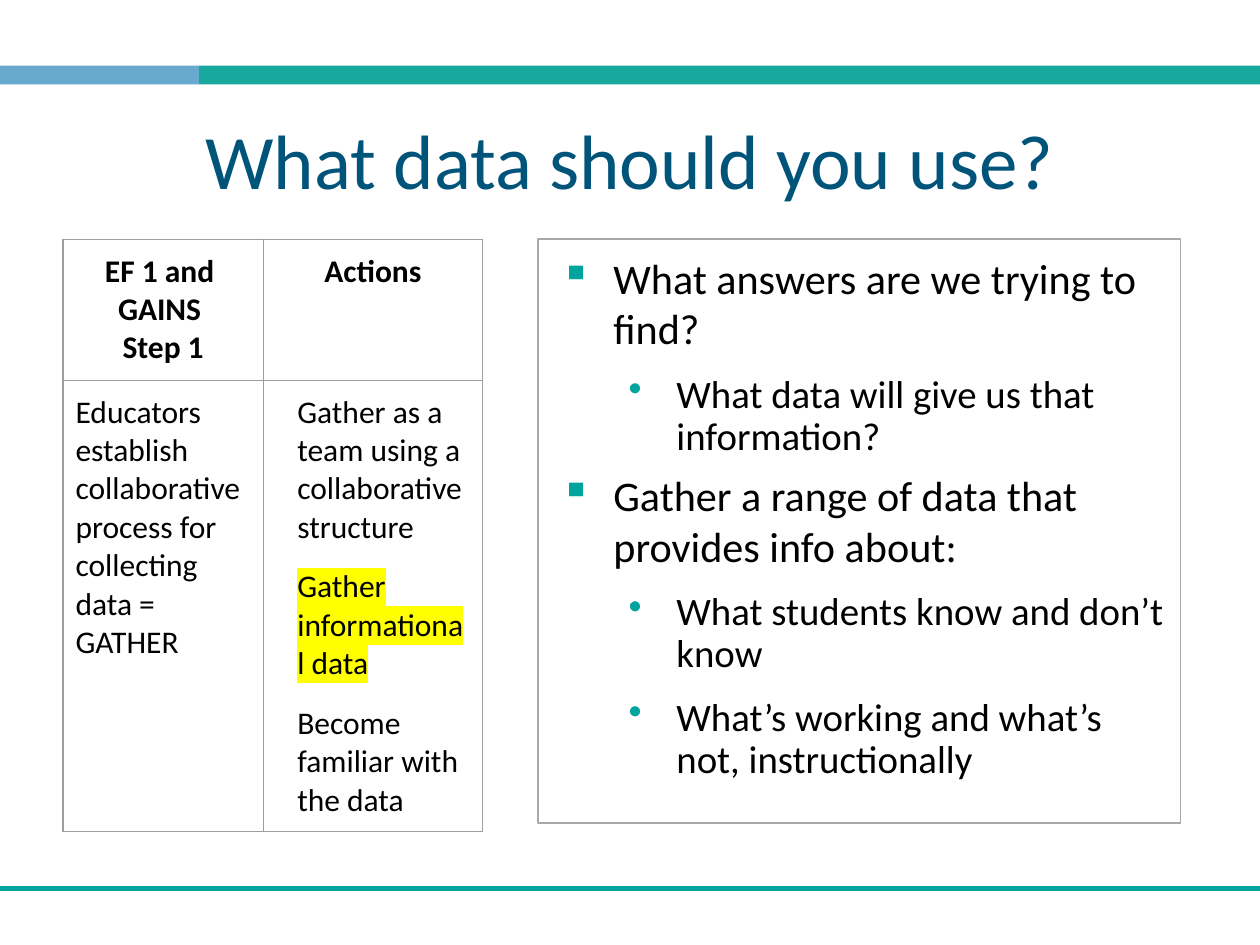
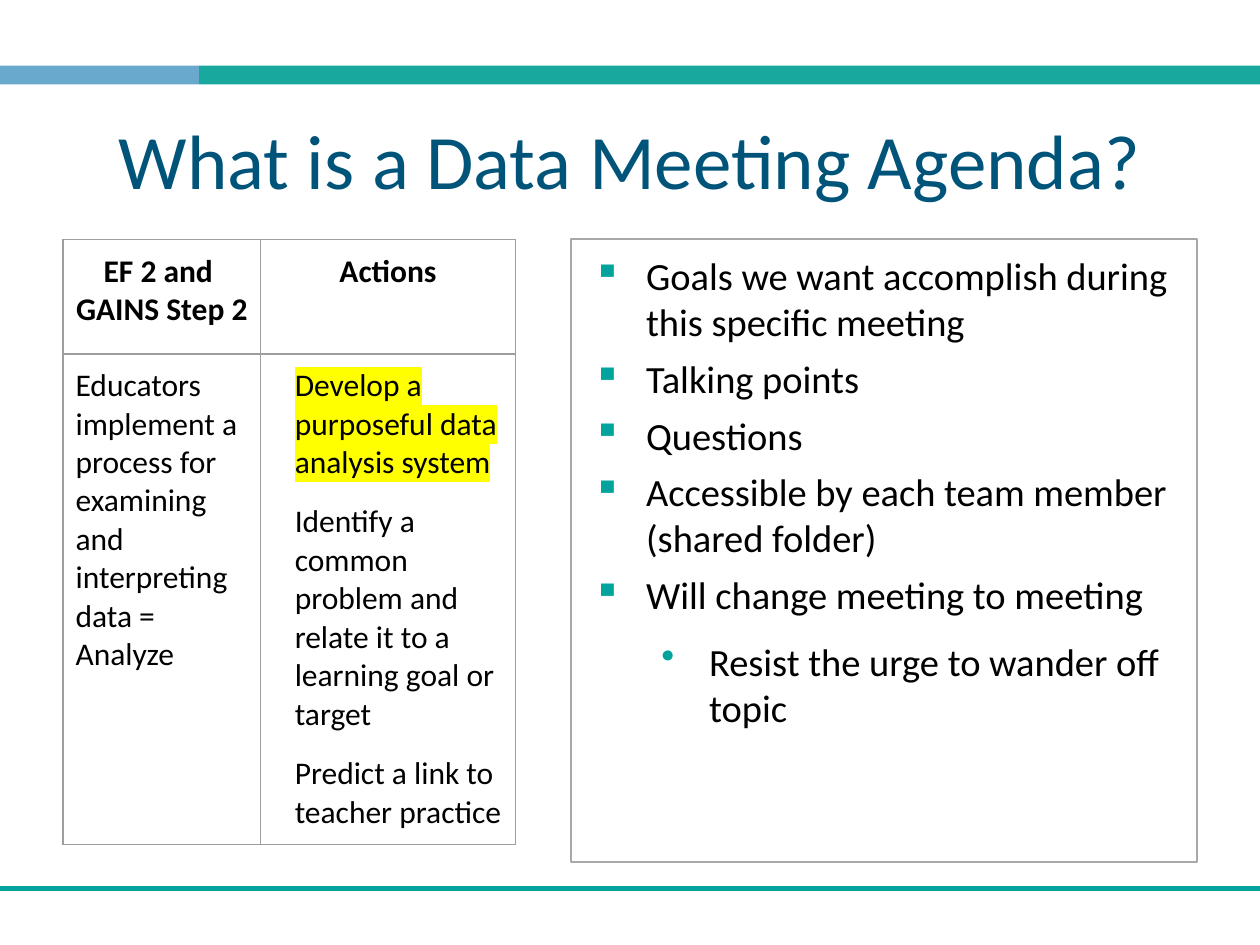
"""Builds two data-team slides, each with an action table and a bulleted panel."""
from lxml import etree
from pptx import Presentation
from pptx.dml.color import RGBColor
from pptx.enum.shapes import MSO_CONNECTOR, MSO_SHAPE
from pptx.enum.text import MSO_ANCHOR, PP_ALIGN
from pptx.oxml import parse_xml
from pptx.oxml.ns import nsdecls, qn
from pptx.util import Inches, Pt

RECTANGLE = MSO_SHAPE.RECTANGLE
STRAIGHT = MSO_CONNECTOR.STRAIGHT
CENTER, LEFT = PP_ALIGN.CENTER, PP_ALIGN.LEFT
TOP, MIDDLE = MSO_ANCHOR.TOP, MSO_ANCHOR.MIDDLE

FONT = "Calibri"
BLUE, TEAL, ACCENT, NAVY = "69A9CD", "19A89E", "00A49D", "005479"
BLACK, PANEL_LINE, TABLE_LINE, YELLOW = "000000", "A7A8AA", "9E9E9E", "FFFF00"
WIDTH, HEIGHT = Inches(10), Inches(7.5)
MARGIN = Inches(0.5)
CONTENT_TOP = Inches(1.9)
INSET = Inches(0.1)
BAND_TOP, BAND_HEIGHT, BAND_SPLIT = Inches(0.52), Inches(0.15), Inches(1.58)
BULLETS = [("▪", 0.5, -0.42), ("•", 1, -0.38)]


def color(hex_string):
    return RGBColor.from_string(hex_string)


def add_text(paragraph, text, size, hex_string=BLACK, bold=False, align=LEFT):
    paragraph.alignment = align
    run = paragraph.add_run()
    run.text = text
    run.font.name, run.font.size, run.font.bold = FONT, Pt(size), bold
    run.font.color.rgb = color(hex_string)
    return run


slides = [
    {
        "title": "What data should you use?",
        "columns": [1.59, 1.74],
        "rows": [1.12, 3.58],
        "heading": ["EF 1 and ", "GAINS ", "Step 1"],
        "process": "Educators establish collaborative process for collecting data = GATHER",
        "actions": ["Gather as a team using a collaborative structure",
                    "Gather informational data",
                    "Become familiar with the data"],
        "current_action": 1,
        "panel": [4.27, 5.1, 4.63],
        "sizes": [24.1, 22.2],
        "sub_spacing": [0.9, 6.4, 6],
        "points": [(0, "What answers are we trying to find?"),
                   (1, "What data will give us that information?"),
                   (0, "Gather a range of data that provides info about:"),
                   (1, "What students know and don’t know"),
                   (1, "What’s working and what’s not, instructionally")],
    },
    {
        "title": "What is a Data Meeting Agenda?",
        "columns": [1.57, 2.02],
        "rows": [0.91, 3.89],
        "heading": ["EF 2 and ", "GAINS Step 2"],
        "process": "Educators implement a process for examining and interpreting data = Analyze",
        "actions": ["Develop a purposeful data analysis system",
                    "Identify a common problem and relate it to a learning goal or target",
                    "Predict a link to teacher practice"],
        "current_action": 0,
        "panel": [4.53, 4.97, 4.94],
        "sizes": [22, 22],
        "sub_spacing": [1.0, 5.6, 0],
        "points": [(0, "Goals we want accomplish during this specific meeting"),
                   (0, "Talking points"),
                   (0, "Questions"),
                   (0, "Accessible by each team member (shared folder)"),
                   (0, "Will change meeting to meeting"),
                   (1, "Resist the urge to wander off topic")],
    },
]

presentation = Presentation()
presentation.slide_width, presentation.slide_height = WIDTH, HEIGHT

for content in slides:
    slide = presentation.slides.add_slide(presentation.slide_layouts[6])

    for left, right, fill in [(0, BAND_SPLIT, BLUE), (BAND_SPLIT, WIDTH, TEAL)]:
        band = slide.shapes.add_shape(RECTANGLE, left, BAND_TOP, right - left, BAND_HEIGHT)
        band.shadow.inherit = False
        band.fill.solid()
        band.fill.fore_color.rgb = color(fill)
        band.line.fill.background()

    footer_top = Inches(7.05)
    footer = slide.shapes.add_connector(STRAIGHT, 0, footer_top, WIDTH, footer_top)
    footer.line.color.rgb = color(ACCENT)
    footer.line.width = Pt(3)
    etree.SubElement(footer.element.spPr, qn("a:effectLst"))

    title = slide.shapes.add_textbox(MARGIN, Inches(0.66), WIDTH - 2 * MARGIN, Inches(1.2))
    add_text(title.text_frame.paragraphs[0], content["title"], 44, NAVY, align=CENTER)

    left, width, height = map(Inches, content["panel"])
    panel = slide.shapes.add_shape(RECTANGLE, left, CONTENT_TOP, width, height)
    panel.shadow.inherit = False
    panel.fill.background()
    panel.line.color.rgb = color(PANEL_LINE)
    panel.line.width = Pt(1)

    for shape, anchor in [(title, MIDDLE), (panel, TOP)]:
        frame = shape.text_frame
        frame.word_wrap = True
        frame.vertical_anchor = anchor
        frame.margin_left = frame.margin_right = INSET
        frame.margin_top = frame.margin_bottom = INSET

    for index, (level, text) in enumerate(content["points"]):
        frame = panel.text_frame
        paragraph = frame.add_paragraph() if index else frame.paragraphs[0]
        paragraph.level = level
        symbol, indent, hanging = BULLETS[level]
        properties = paragraph._p.get_or_add_pPr()
        properties.set("marL", str(Inches(indent)))
        properties.set("indent", str(Inches(hanging)))
        bullet_color = etree.SubElement(properties, qn("a:buClr"))
        etree.SubElement(bullet_color, qn("a:srgbClr"), val=ACCENT)
        etree.SubElement(properties, qn("a:buChar"), char=symbol)
        line_spacing, before, after = content["sub_spacing"] if level else (1.0, 0, 6)
        paragraph.line_spacing = line_spacing
        paragraph.space_before, paragraph.space_after = Pt(before), Pt(after)
        add_text(paragraph, text, content["sizes"][level])

    columns, rows = content["columns"], content["rows"]
    table = slide.shapes.add_table(2, 2, MARGIN, CONTENT_TOP,
                                   Inches(sum(columns)), Inches(sum(rows))).table
    table.first_row = table.horz_banding = False
    for index in range(2):
        table.columns[index].width = Inches(columns[index])
        table.rows[index].height = Inches(rows[index])

    cell_texts = [content["heading"], ["Actions"], [content["process"]], content["actions"]]
    for position, (cell, texts) in enumerate(zip(table.iter_cells(), cell_texts)):
        is_header, is_actions = position < 2, position == 3
        cell.margin_left = cell.margin_right = INSET
        cell.margin_top = cell.margin_bottom = INSET
        cell_properties = cell._tc.get_or_add_tcPr()
        for side in "LRTB":
            cell_properties.append(parse_xml(
                f'<a:ln{side} {nsdecls("a")} w="{Pt(0.75)}"><a:solidFill>'
                f'<a:srgbClr val="{TABLE_LINE}"/></a:solidFill></a:ln{side}>'))
        cell.fill.background()
        for index, text in enumerate(texts):
            frame = cell.text_frame
            paragraph = frame.add_paragraph() if index else frame.paragraphs[0]
            paragraph.space_after = Pt(0 if is_header else 12)
            run = add_text(paragraph, text, 18, bold=is_header,
                           align=CENTER if is_header else LEFT)
            if is_actions:
                paragraph._p.get_or_add_pPr().set("marL", str(Inches(0.17)))
            if is_actions and index == content["current_action"]:
                highlight = etree.Element(qn("a:highlight"))
                etree.SubElement(highlight, qn("a:srgbClr"), val=YELLOW)
                run._r.rPr.find(qn("a:solidFill")).addnext(highlight)

presentation.save("out.pptx")
